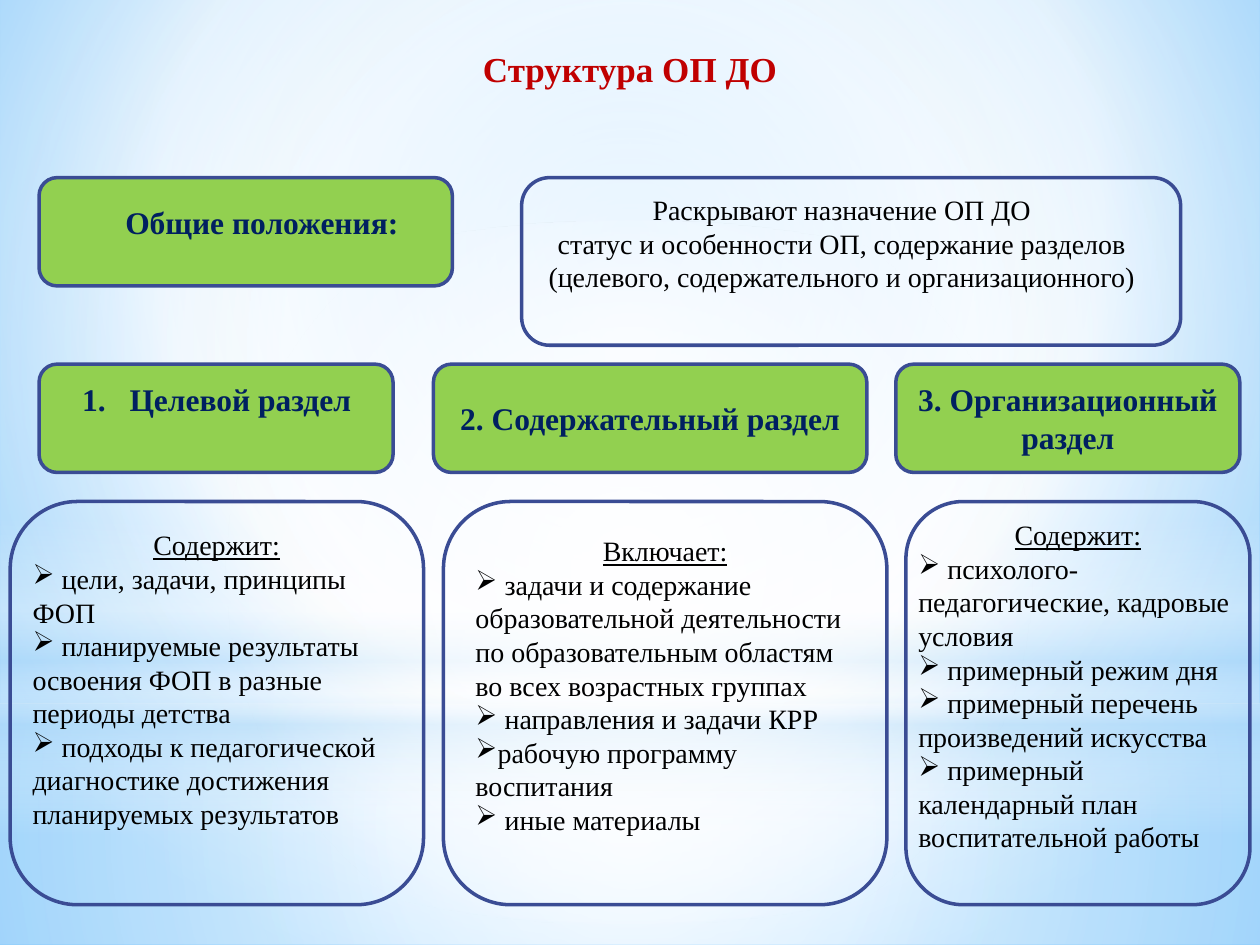
"""Build the slide on the structure of the educational programme."""
from dataclasses import dataclass

from lxml import etree
from pptx import Presentation
from pptx.dml.color import RGBColor
from pptx.enum.shapes import MSO_SHAPE as Shape
from pptx.enum.text import MSO_ANCHOR as Anchor, PP_ALIGN as Align
from pptx.oxml.ns import qn
from pptx.util import Pt


@dataclass(frozen=True)
class Theme:
    """Colours, type sizes and the typeface."""
    red: str = "C00000"
    navy: str = "002060"
    black: str = "000000"
    green: str = "92D050"
    edge: str = "3A4C94"
    white: str = "FFFFFF"
    haze: str = "B4DCFA"
    sky: str = "9ED5FF"
    deep_sky: str = "5BB9FF"
    font: str = "Times New Roman"
    title: float = 20
    heading: float = 18
    body: float = 16


THEME = Theme()
TITLE = {"size": Pt(THEME.title), "bold": True, "color": THEME.red}
HEADING = {"size": Pt(THEME.heading), "bold": True, "color": THEME.navy}
BODY = {"size": Pt(THEME.body), "color": THEME.black}
LEAD = {**BODY, "underline": True}

SECTION_TOP, SECTION_HEIGHT = 208.1, 61.9
DETAIL_TOP, DETAIL_HEIGHT = 286.6, 230.4
GOALS = ("Содержит:", [
    " цели, задачи, принципы ФОП",
    " планируемые результаты освоения ФОП в разные периоды детства",
    " подходы к педагогической диагностике достижения планируемых результатов"])
CONTENT = ("Включает:", [
    " задачи и содержание образовательной деятельности по образовательным "
    "областям во всех возрастных группах",
    " направления и задачи КРР",
    "рабочую программу воспитания",
    " иные материалы"])
ORGANIZATION = ("Содержит:", [
    " психолого-педагогические, кадровые условия",
    " примерный режим дня",
    " примерный перечень произведений искусства",
    " примерный календарный план воспитательной работы"])


def set_values(target, values):
    """Set each named attribute of the target."""
    for name, value in values.items():
        setattr(target, name, value)


def set_gradient(fill, parent, stops, focus=None):
    """Give a fill a circular gradient around focus, or a vertical one."""
    fill.gradient()
    gradient = parent.find(qn("a:gradFill"))
    for child in list(gradient):
        gradient.remove(child)
    stop_list = etree.SubElement(gradient, qn("a:gsLst"))
    for position, color, opacity in stops:
        stop = etree.SubElement(stop_list, qn("a:gs"), pos=str(position * 1000))
        tint = etree.SubElement(stop, qn("a:srgbClr"), val=color)
        if opacity < 100:
            etree.SubElement(tint, qn("a:alpha"), val=str(opacity * 1000))
    if focus:
        circle = etree.SubElement(gradient, qn("a:path"), {"path": "circle"})
        sides = {side: str(value * 1000) for side, value in zip("ltrb", focus)}
        etree.SubElement(circle, qn("a:fillToRect"), sides)
    else:
        etree.SubElement(gradient, qn("a:lin"), ang="5400000", scaled="0")


def add_layer(page, kind, top, height, stops, focus=None):
    """Add a full-width translucent layer of the backdrop."""
    layer = page.shapes.add_shape(kind, 0, Pt(top), Pt(720), Pt(height))
    layer.shadow.inherit = False
    layer.line.fill.background()
    set_gradient(layer.fill, layer._element.spPr, stops, focus)


def add_backdrop(page):
    """Paint the background and its soft light layers."""
    white, haze = THEME.white, THEME.haze
    fill = page.background.fill
    fill.gradient()
    set_gradient(fill, page._element.find(".//" + qn("p:bgPr")),
                 [(0, THEME.sky, 100), (60, white, 100), (100, THEME.deep_sky, 100)],
                 (20, 10, 20, 60))
    center = (50, 50, 50, 50)
    add_layer(page, Shape.RECTANGLE, 401.8, 138.2,
              [(0, white, 91), (37, white, 76), (100, haze, 79)], center)
    add_layer(page, Shape.RECTANGLE, 0, 401.8,
              [(0, white, 89), (48, white, 62), (100, haze, 79)], center)
    add_layer(page, Shape.RECTANGLE, 296.6, 180,
              [(0, white, 0), (29, white, 30), (45, haze, 40),
               (55, white, 26), (65, haze, 60), (100, white, 0)])
    add_layer(page, Shape.OVAL, 126, 401.8, [(0, white, 100), (56, white, 0)], center)


def add_card(page, left, top, width, height, color=None):
    """Add an outlined rounded card, filled when a colour is given."""
    card = page.shapes.add_shape(Shape.ROUNDED_RECTANGLE,
                                 Pt(left), Pt(top), Pt(width), Pt(height))
    card.shadow.inherit = False
    card.line.color.rgb = RGBColor.from_string(THEME.edge)
    card.line.width = Pt(2)
    if color:
        card.fill.solid()
        card.fill.fore_color.rgb = RGBColor.from_string(color)
    else:
        card.fill.background()
    return card


def add_box(page, left, top, width, height):
    """Add a wrapping text box and return it."""
    box = page.shapes.add_textbox(Pt(left), Pt(top), Pt(width), Pt(height))
    box.text_frame.word_wrap = True
    return box


def set_bullet(para, tag, indent=0, **mark):
    """Give a paragraph a bullet or number with a hanging indent."""
    properties = para._p.get_or_add_pPr()
    properties.set("marL", str(Pt(indent)))
    properties.set("indent", str(-Pt(indent)))
    etree.SubElement(properties, qn(tag), mark)


def write(box, lines, style, align=Align.CENTER, anchor=Anchor.TOP):
    """Append lines to a box in one style and return their paragraphs."""
    frame = box.text_frame
    frame.vertical_anchor = anchor
    paras = []
    for text in lines:
        para = frame.paragraphs[0] if not frame.text else frame.add_paragraph()
        para.alignment = align
        span = para.add_run()
        span.text = text
        values = {**style, "name": THEME.font}
        span.font.color.rgb = RGBColor.from_string(values.pop("color"))
        set_values(span.font, values)
        paras.append(para)
    return paras


def write_details(box, details, anchor=Anchor.TOP):
    """Write an underlined lead line and its bulleted items."""
    lead, items = details
    write(box, [lead], LEAD, anchor=anchor)
    for para in write(box, items, BODY, Align.LEFT, anchor):
        set_bullet(para, "a:buChar", char="➢")


def main():
    """Build and save the deck."""
    deck = Presentation()
    set_values(deck, {"slide_width": Pt(720), "slide_height": Pt(540)})
    page = deck.slides.add_slide(deck.slide_layouts[6])
    add_backdrop(page)

    write(add_box(page, 36, 23.5, 648, 66), ["Структура ОП ДО"], TITLE)
    add_card(page, 22.3, 101.5, 236.2, SECTION_HEIGHT, THEME.green)
    write(add_box(page, 39.6, 112.3, 224.6, 28.8), ["Общие положения: "], HEADING)
    add_card(page, 298.1, 101.5, 376.6, 95.8)
    write(add_box(page, 298.1, 106.6, 365.8, 65.5),
          ["Раскрывают назначение ОП ДО",
           "статус и особенности ОП, содержание разделов "
           "(целевого, содержательного и организационного)"], BODY)

    sections = [add_card(page, left, SECTION_TOP, width, SECTION_HEIGHT, THEME.green)
                for left, width in ((22.3, 202.3), (247.7, 247.7), (511.9, 196.6))]
    goal_box = add_box(page, 28.1, 213.8, 191.5, 28.8)
    goal, = write(goal_box, ["Целевой раздел"], HEADING)
    set_bullet(goal, "a:buAutoNum", 27, type="arabicPeriod")
    for card, text in zip(sections[1:], ("2. Содержательный раздел",
                                         "3. Организационный раздел")):
        write(card, [text], HEADING, anchor=Anchor.MIDDLE)

    _, content_card, _ = [
        add_card(page, left, DETAIL_TOP, width, DETAIL_HEIGHT)
        for left, width in ((5.8, 236.2), (253.4, 253.4), (517.7, 196.6))]
    write_details(add_box(page, 11.5, 298.1, 224.6, 181.4), GOALS)
    content_card.text_frame.margin_bottom = Pt(24.3)
    write_details(content_card, CONTENT, Anchor.MIDDLE)
    write_details(add_box(page, 517.7, 292.3, 196.6, 223.2), ORGANIZATION)
    deck.save("out.pptx")


if __name__ == "__main__":
    main()
